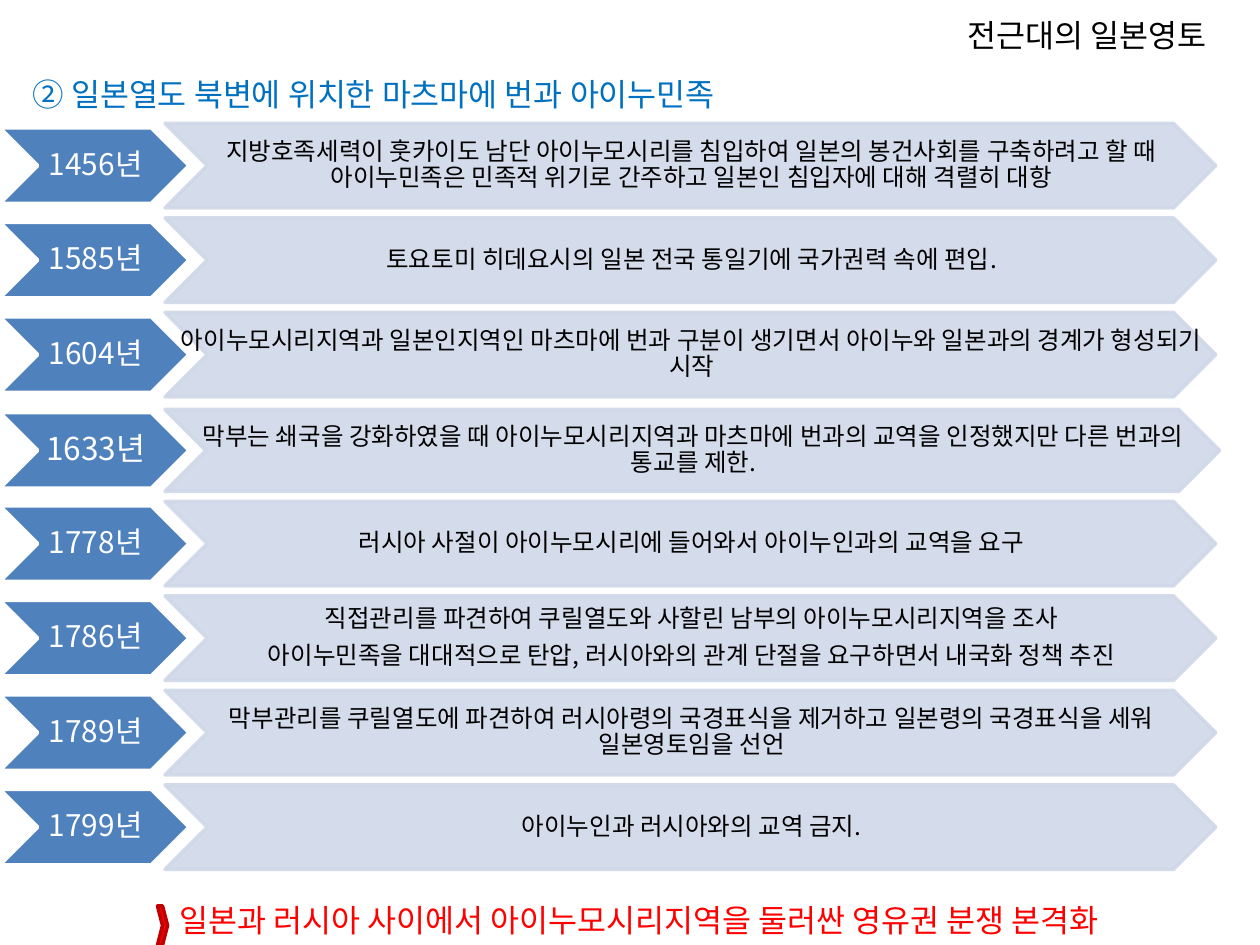
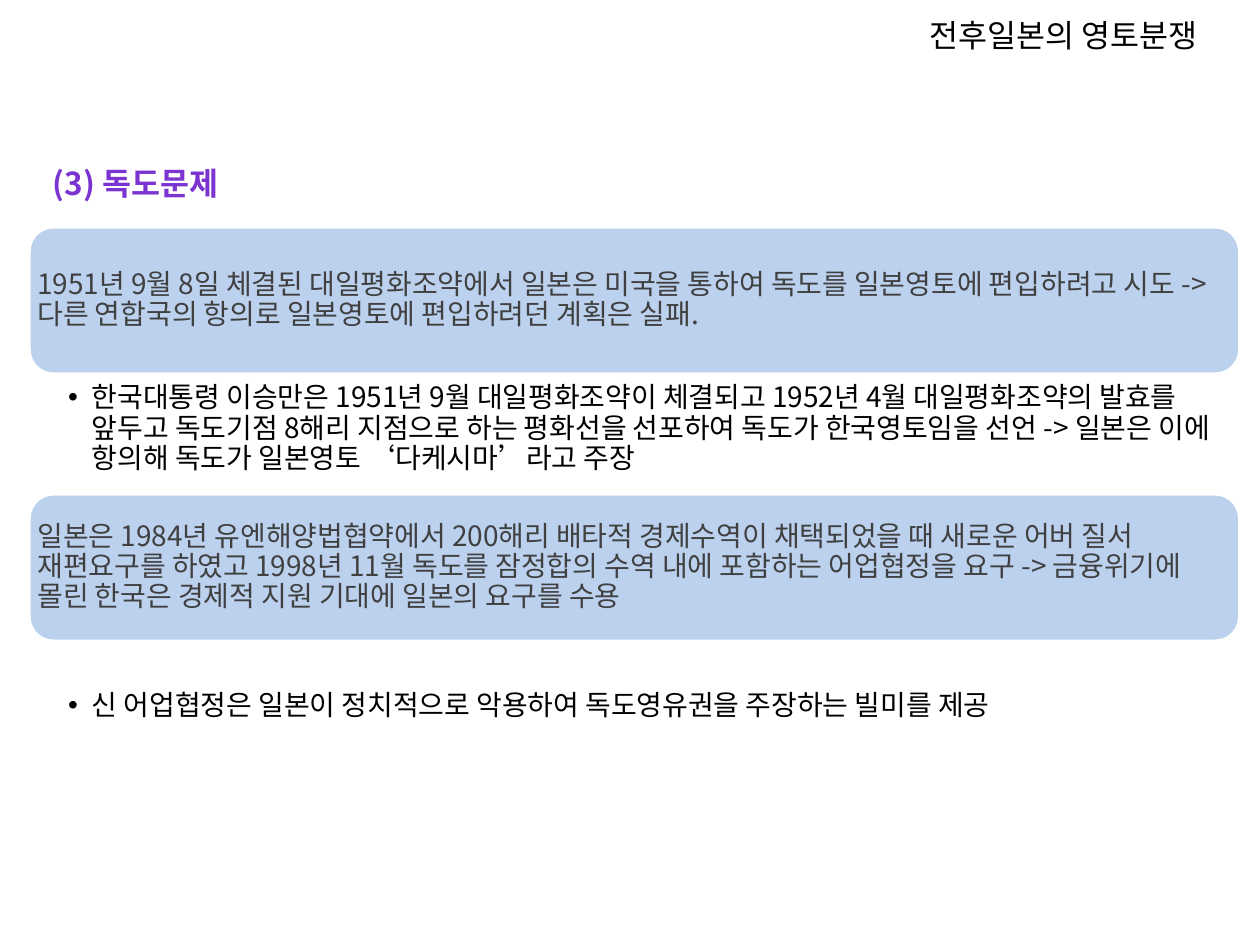
from dataclasses import dataclass

from lxml.etree import SubElement
from pptx import Presentation
from pptx.dml.color import RGBColor
from pptx.enum.shapes import MSO_SHAPE
from pptx.enum.text import MSO_ANCHOR, MSO_AUTO_SIZE, PP_ALIGN
from pptx.oxml.ns import qn
from pptx.util import Inches, Pt

FONT = "Noto Sans CJK KR"
COLORS = {
    "black": "000000", "white": "FFFFFF", "heading": "0070C0", "year": "4F81BD",
    "event": "D0D8E8", "red": "FF0000", "dark_red": "C00000", "purple": "7B34D2",
    "panel": "558ED5", "panel_text": "404040",
}
TITLE_ONLY, TWO_CONTENT = 5, 3
ROW_TOP, ROW_PITCH, ROW_HEIGHT = 0.98, 0.75, 0.67
YEAR_WIDTH, YEAR_HEIGHT, EVENT_LEFT = 1.5, 0.6, 1.31
PANEL_LEFT, PANEL_WIDTH, PANEL_HEIGHT, NOTE_HEIGHT = 0.23, 9.61, 1.17, 1.03


@dataclass(frozen=True)
class Box:
    left: float
    top: float
    width: float
    height: float

    def lengths(self) -> list:
        return [Inches(value) for value in (self.left, self.top, self.width, self.height)]


@dataclass(frozen=True)
class TextStyle:
    size: int = 18
    color: str = "black"
    bold: bool = False
    align: PP_ALIGN = PP_ALIGN.LEFT
    anchor: MSO_ANCHOR = MSO_ANCHOR.TOP
    insets: tuple = (0.1, 0.05, 0.1, 0.05)
    line_spacing: float = 1.0
    space_after: int = 0
    bullet: bool = False


@dataclass(frozen=True)
class Event:
    year: str
    text: str
    year_size: int = 17
    width: float = 8.34
    height: float = ROW_HEIGHT


@dataclass(frozen=True)
class Panel:
    top: float
    text: str
    note_top: float
    note: str


HEADING_STYLE = TextStyle(color="heading")
CONCLUSION_STYLE = TextStyle(color="red")
SECTION_STYLE = TextStyle(color="purple", bold=True, align=PP_ALIGN.CENTER)
EVENT_STYLE = TextStyle(14, align=PP_ALIGN.CENTER, anchor=MSO_ANCHOR.MIDDLE,
                        insets=(0.02, 0.01, 0, 0.01), line_spacing=0.9, space_after=6)
PANEL_STYLE = TextStyle(16, "panel_text", anchor=MSO_ANCHOR.MIDDLE,
                        insets=(0.01, 0.01, 0.01, 0.01), line_spacing=0.9, space_after=6)
NOTE_STYLE = TextStyle(16, anchor=MSO_ANCHOR.MIDDLE, insets=(0.31, 0.02, 0.12, 0.02),
                       line_spacing=0.9, space_after=3, bullet=True)

EVENTS = [
    Event("1456년", "지방호족세력이 훗카이도 남단 아이누모시리를 침입하여 일본의 봉건사회를 구축하려고 할 때 "
          "아이누민족은 민족적 위기로 간주하고 일본인 침입자에 대해 격렬히 대항"),
    Event("1585년", "토요토미 히데요시의 일본 전국 통일기에 국가권력 속에 편입."),
    Event("1604년", "아이누모시리지역과 일본인지역인 마츠마에 번과 구분이 생기면서 "
          "아이누와 일본과의 경계가 형성되기 시작"),
    Event("1633년", "막부는 쇄국을 강화하였을 때 아이누모시리지역과 마츠마에 번과의 교역을 인정했지만 "
          "다른 번과의 통교를 제한.", year_size=18, width=8.37, height=0.65),
    Event("1778년", "러시아 사절이 아이누모시리에 들어와서 아이누인과의 교역을 요구"),
    Event("1786년", "직접관리를 파견하여 쿠릴열도와 사할린 남부의 아이누모시리지역을 조사\n"
          "아이누민족을 대대적으로 탄압, 러시아와의 관계 단절을 요구하면서 내국화 정책 추진"),
    Event("1789년", "막부관리를 쿠릴열도에 파견하여 러시아령의 국경표식을 제거하고 "
          "일본령의 국경표식을 세워 일본영토임을 선언"),
    Event("1799년", "아이누인과 러시아와의 교역 금지."),
]
PANELS = [
    Panel(1.8, "1951년 9월 8일 체결된 대일평화조약에서 일본은 미국을 통하여 독도를 일본영토에 "
          "편입하려고 시도 -> 다른 연합국의 항의로 일본영토에 편입하려던 계획은 실패.",
          2.89, "한국대통령 이승만은 1951년 9월 대일평화조약이 체결되고 1952년 4월 대일평화조약의 "
          "발효를 앞두고 독도기점 8해리 지점으로 하는 평화선을 선포하여 독도가 한국영토임을 선언 -> "
          "일본은 이에 항의해 독도가 일본영토 ‘다케시마’라고 주장"),
    Panel(3.92, "일본은 1984년 유엔해양법협약에서 200해리 배타적 경제수역이 채택되었을 때 새로운 어버 질서 "
          "재편요구를 하였고 1998년 11월 독도를 잠정합의 수역 내에 포함하는 어업협정을 요구 -> "
          "금융위기에 몰린 한국은 경제적 지원 기대에 일본의 요구를 수용",
          5.09, "신 어업협정은 일본이 정치적으로 악용하여 독도영유권을 주장하는 빌미를 제공"),
]


def rgb(name: str) -> RGBColor:
    return RGBColor.from_string(COLORS[name])


def add_bullet(paragraph) -> None:
    properties = paragraph._p.get_or_add_pPr()
    properties.set("marL", str(Inches(0.19)))
    properties.set("indent", str(-Inches(0.19)))
    SubElement(properties, qn("a:buChar")).set("char", "•")


def write(shape, text: str, style: TextStyle) -> None:
    """Fill a shape, text box or placeholder with styled text."""
    frame = shape.text_frame
    frame.text = text
    frame.word_wrap = True
    frame.auto_size = MSO_AUTO_SIZE.NONE
    frame.vertical_anchor = style.anchor
    (frame.margin_left, frame.margin_top,
     frame.margin_right, frame.margin_bottom) = map(Inches, style.insets)
    for paragraph in frame.paragraphs:
        if style.bullet:
            add_bullet(paragraph)
        paragraph.alignment = style.align
        paragraph.line_spacing = style.line_spacing
        paragraph.space_before = Pt(0)
        paragraph.space_after = Pt(style.space_after)
        for run in paragraph.runs:
            run.font.size = Pt(style.size)
            run.font.bold = style.bold
            run.font.color.rgb = rgb(style.color)
            run.font.name = FONT
            SubElement(run._r.get_or_add_rPr(), qn("a:ea")).set("typeface", FONT)


def add_text(slide, box: Box, text: str, style: TextStyle) -> None:
    write(slide.shapes.add_textbox(*box.lengths()), text, style)


def place(placeholder, box: Box) -> None:
    (placeholder.left, placeholder.top,
     placeholder.width, placeholder.height) = box.lengths()


def set_opacity(fill, percent: int) -> None:
    for color in fill._xPr.iterfind(qn("a:solidFill") + "/" + qn("a:srgbClr")):
        SubElement(color, qn("a:alpha")).set("val", str(percent * 1000))


def add_filled(slide, kind: MSO_SHAPE, box: Box, fill: str, line: str,
               fill_opacity: int = 100, line_opacity: int = 100):
    shape = slide.shapes.add_shape(kind, *box.lengths())
    shape.shadow.inherit = False
    shape.fill.solid()
    shape.fill.fore_color.rgb = rgb(fill)
    shape.line.color.rgb = rgb(line)
    shape.line.width = Pt(2)
    set_opacity(shape.fill, fill_opacity)
    set_opacity(shape.line.fill, line_opacity)
    return shape


def add_titled_slide(presentation, layout: int, title: str, left: float, width: float):
    slide = presentation.slides.add_slide(presentation.slide_layouts[layout])
    place(slide.shapes.title, Box(left, 0.08, width, 0.4))
    write(slide.shapes.title, title, TextStyle())
    return slide


def add_event(slide, row: int, event: Event) -> None:
    """Draw a year chevron and its event, resting on the bottom of the row."""
    top = ROW_TOP + row * ROW_PITCH + ROW_HEIGHT - event.height
    year_top = top + (event.height - YEAR_HEIGHT) / 2
    year = add_filled(slide, MSO_SHAPE.CHEVRON,
                      Box(0, year_top, YEAR_WIDTH, YEAR_HEIGHT), "year", "white")
    write(year, event.year, TextStyle(
        event.year_size, "white", align=PP_ALIGN.CENTER, anchor=MSO_ANCHOR.MIDDLE,
        insets=EVENT_STYLE.insets, line_spacing=0.9, space_after=6))
    box = Box(EVENT_LEFT, top, event.width, event.height)
    add_filled(slide, MSO_SHAPE.CHEVRON, box, "event", "event", 90, 90)
    add_text(slide, box, event.text, EVENT_STYLE)


def build_timeline(presentation) -> None:
    slide = add_titled_slide(presentation, TITLE_ONLY, "전근대의 일본영토", 7.58, 2.31)
    add_text(slide, Box(0.16, 0.55, 6.56, 0.4),
             "② 일본열도 북변에 위치한 마츠마에 번과 아이누민족", HEADING_STYLE)
    for row, event in enumerate(EVENTS):
        add_event(slide, row, event)
    add_text(slide, Box(1.33, 7.1, 8.4, 0.4),
             "일본과 러시아 사이에서 아이누모시리지역을 둘러싼 영유권 분쟁 본격화", CONCLUSION_STYLE)
    add_filled(slide, MSO_SHAPE.CHEVRON, Box(1.25, 7.19, 0.08, 0.31), "red", "dark_red")


def build_dispute(presentation) -> None:
    slide = add_titled_slide(presentation, TWO_CONTENT, "전후일본의 영토분쟁", 7.28, 2.56)
    notes = [item for item in slide.placeholders if item.placeholder_format.idx > 0]
    add_text(slide, Box(PANEL_LEFT, 1.25, 1.69, 0.4), "(3) 독도문제", SECTION_STYLE)
    for panel, note in zip(PANELS, notes):
        shape = add_filled(slide, MSO_SHAPE.ROUNDED_RECTANGLE,
                           Box(PANEL_LEFT, panel.top, PANEL_WIDTH, PANEL_HEIGHT),
                           "panel", "white", fill_opacity=40)
        write(shape, panel.text, PANEL_STYLE)
        place(note, Box(PANEL_LEFT, panel.note_top, PANEL_WIDTH, NOTE_HEIGHT))
        write(note, panel.note, NOTE_STYLE)


def main() -> None:
    presentation = Presentation()
    presentation.slide_width = Inches(10)
    presentation.slide_height = Inches(7.5)
    build_timeline(presentation)
    build_dispute(presentation)
    presentation.save("out.pptx")


if __name__ == "__main__":
    main()
